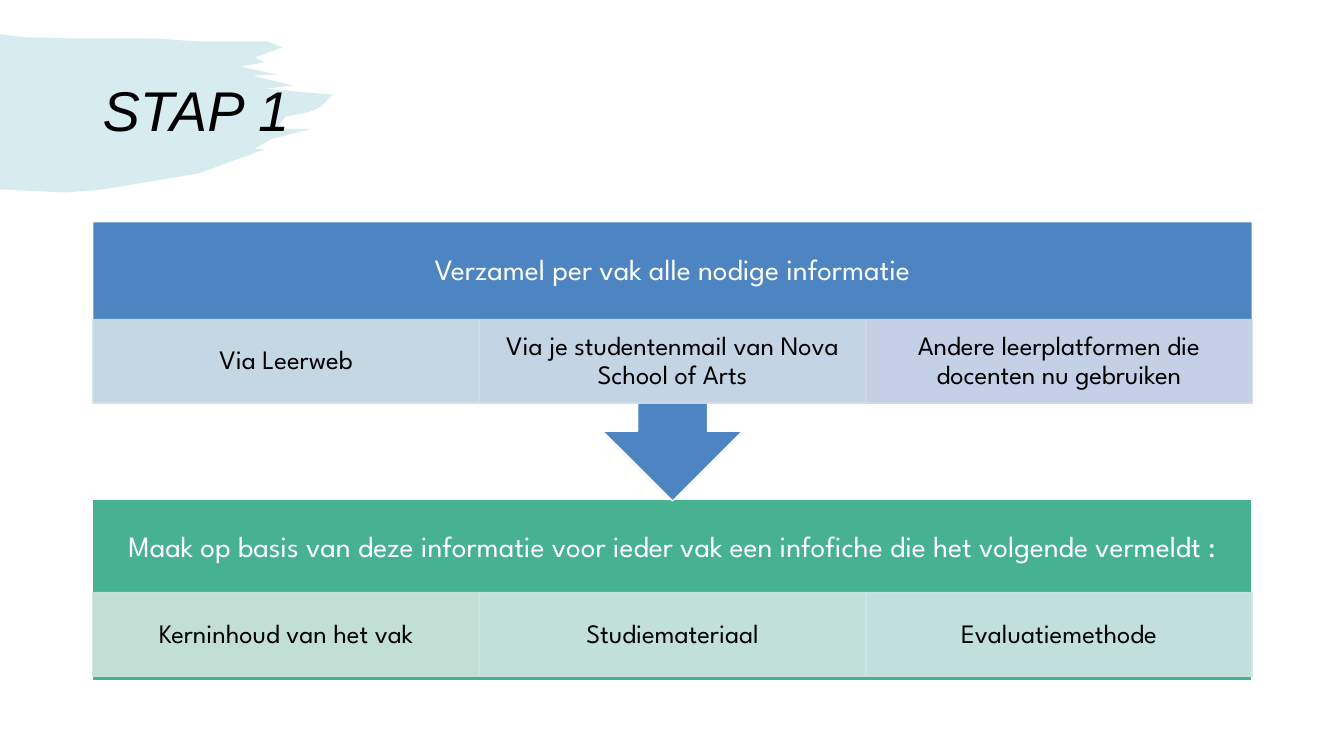
import pptx
import pptx.util
import pptx.dml.color
import pptx.enum.shapes
import pptx.enum.text
from lxml import etree
from pptx.oxml.ns import qn

TITLE = "STAP 1"
STEPS = [
    dict(head="Verzamel per vak alle nodige informatie", shape="UP_ARROW_CALLOUT", rotation=180,
         top=2.2, height=2.77, cells_top=3.17, fill="4D85C3",
         cells=[("Via Leerweb", "D0E2E7"),
                ("Via je studentenmail van Nova School of Arts", "D0DEE8"),
                ("Andere leerplatformen die docenten nu gebruiken", "D0D9E9")]),
    dict(head="Maak op basis van deze informatie voor ieder vak een infofiche die het volgende vermeldt :",
         shape="RECTANGLE", rotation=0, top=4.95, height=1.8, cells_top=5.88, fill="46B291",
         cells=[("Kerninhoud van het vak", "CFE4DC"),
                ("Studiemateriaal", "CFE5E1"),
                ("Evaluatiemethode", "CFE6E6")]),
]
BRUSH_OUTLINE = [
    (0, 0.34), (0.25, 0.37), (0.66, 0.38), (1.51, 0.38), (1.94, 0.41), (2.65, 0.41), (2.8, 0.47),
    (2.53, 0.57), (2.62, 0.62), (2.38, 0.66), (2.75, 0.74), (2.51, 0.75), (2.9, 0.85),
    (2.63, 0.88), (3.3, 0.94), (3.18, 1.06), (3.07, 1.11), (2.83, 1.16), (2.74, 1.28),
    (3.08, 1.28), (2.69, 1.38), (2.52, 1.48), (2.63, 1.48), (1.97, 1.72), (1.02, 1.88),
    (0.65, 1.91), (0, 1.88),
]
THEME = dict(
    brush="3BA4B1", line="FFFFFF",
    title=dict(name="Arial", size=40, italic=True, color="000000"),
    head=dict(name="League Spartan", size=21, color="FFFFFF"),
    cell=dict(name="League Spartan", size=19, color="000000"),
)
LEFT, WIDTH = 0.92, 11.5
HEAD_H, CELL_H = 0.97, 0.83

inch, rgb = pptx.util.Inches, pptx.dml.color.RGBColor.from_string
SHAPE, ALIGN = pptx.enum.shapes.MSO_SHAPE, pptx.enum.text.PP_ALIGN


def box(*lengths):
    return [inch(n) for n in lengths]


def paint(sp, fill, line=None, opacity=100):
    sp.shadow.inherit = False
    sp.fill.solid()
    sp.fill.fore_color.rgb = rgb(fill)
    if line:
        sp.line.color.rgb = rgb(line)
        sp.line.width = pptx.util.Pt(1)
    else:
        sp.line.fill.background()
    if opacity < 100:
        for color in sp._element.spPr.iter(qn("a:srgbClr")):
            etree.SubElement(color, qn("a:alpha"), val=str(opacity * 1000))


def write(sp, text, style, align, pad_x, pad_y):
    tf = sp.text_frame
    frame = dict(word_wrap=True, vertical_anchor=pptx.enum.text.MSO_ANCHOR.MIDDLE,
                 margin_left=inch(pad_x), margin_right=inch(pad_x),
                 margin_top=inch(pad_y), margin_bottom=inch(pad_y))
    for key, value in frame.items():
        setattr(tf, key, value)
    p = tf.paragraphs[0]
    p.alignment, p.line_spacing = align, 0.9
    r = p.add_run()
    r.text = text
    for key, value in style.items():
        if key == "color":
            r.font.color.rgb = rgb(value)
        else:
            setattr(r.font, key, pptx.util.Pt(value) if key == "size" else value)


def draw_brush(s):
    start, *points = [box(*point) for point in BRUSH_OUTLINE]
    builder = s.shapes.build_freeform(*start)
    builder.add_line_segments(points, close=True)
    paint(builder.convert_to_shape(), THEME["brush"], opacity=20)


def draw_step(s, step):
    sp = s.shapes.add_shape(getattr(SHAPE, step["shape"]), *box(LEFT, step["top"], WIDTH, step["height"]))
    sp.rotation = step["rotation"]
    paint(sp, step["fill"], THEME["line"])
    head = s.shapes.add_textbox(*box(LEFT, step["top"], WIDTH, HEAD_H))
    write(head, step["head"], THEME["head"], ALIGN.CENTER, 0.16, 0.16)
    cell_w = WIDTH / len(step["cells"])
    for col, (text, color) in enumerate(step["cells"]):
        cell = s.shapes.add_shape(SHAPE.RECTANGLE,
                                  *box(LEFT + col * cell_w, step["cells_top"], cell_w, CELL_H))
        paint(cell, color, color, opacity=90)
        write(cell, text, THEME["cell"], ALIGN.CENTER, 0.15, 0.03)


def main():
    prs = pptx.Presentation()
    prs.slide_width, prs.slide_height = box(13.33, 7.5)
    s = prs.slides.add_slide(prs.slide_layouts[6])
    draw_brush(s)
    title = s.shapes.add_textbox(*box(LEFT, 0.4, WIDTH, 1.45))
    write(title, TITLE, THEME["title"], ALIGN.LEFT, 0.1, 0.05)
    for step in reversed(STEPS):
        draw_step(s, step)
    prs.save("out.pptx")


if __name__ == "__main__":
    main()
